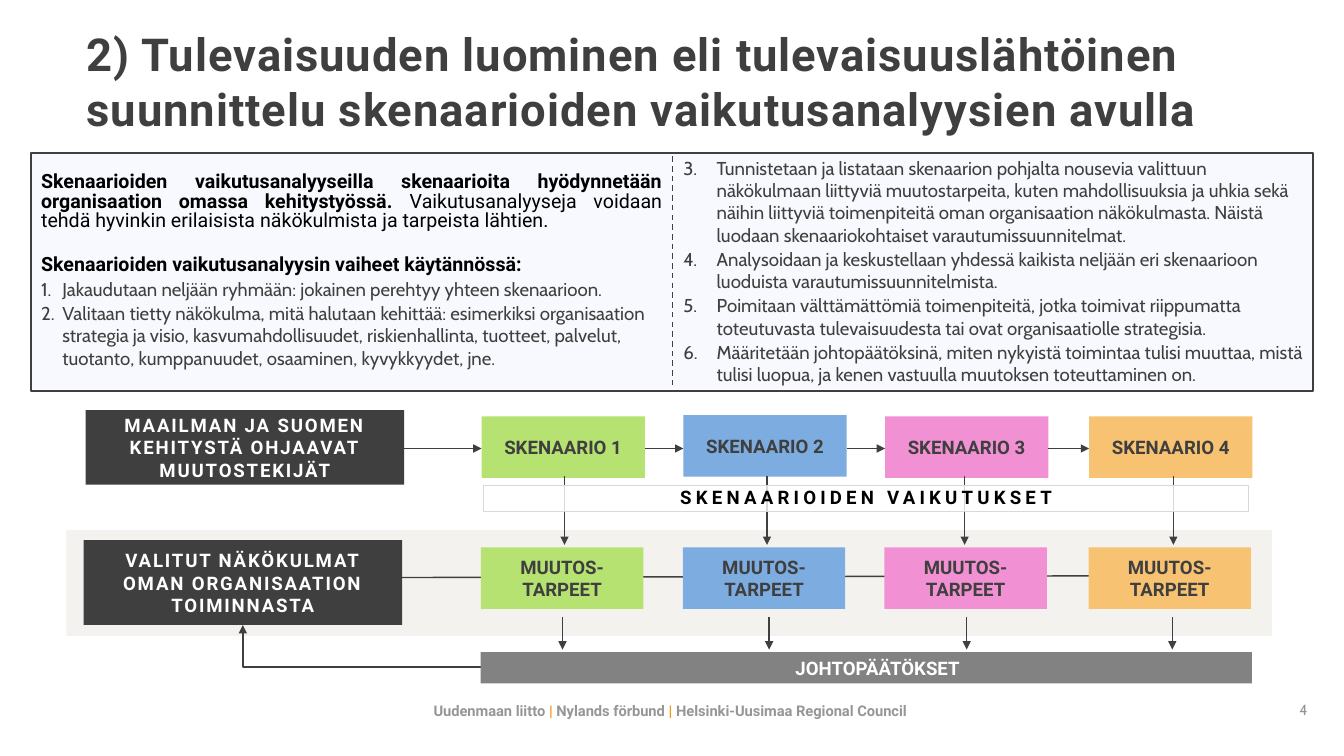
from lxml.etree import SubElement
from pptx import Presentation
from pptx.dml.color import RGBColor
from pptx.enum.dml import MSO_LINE
from pptx.enum.shapes import MSO_CONNECTOR, MSO_SHAPE
from pptx.enum.text import MSO_ANCHOR, PP_ALIGN
from pptx.oxml.ns import qn
from pptx.util import Pt

COLORS = {
    "dark": "3F3F3F", "black": "000000", "white": "FFFFFF", "panel": "F8F9FE",
    "band": "EDEAE5", "border": "D9D9D9", "conclusion": "828282",
    "footer": "969696", "number": "939393", "orange": "F49915",
    "green": "B6E272", "blue": "7DADE0", "pink": "F191D3", "amber": "F8C273",
}
COLORS = {name: RGBColor.from_string(value) for name, value in COLORS.items()}

deck = Presentation()
deck.slide_width, deck.slide_height = Pt(960), Pt(540)
page = deck.slides.add_slide(deck.slide_layouts[6])


def add_box(place, fill=None, texts=(), size=13.3, color="dark", face="Roboto", bold=True,
            align=PP_ALIGN.CENTER, inset=(7.2, 3.6), tracking=0, outline=None, weight=1):
    place = [Pt(length) for length in place]
    if fill or outline:
        box = page.shapes.add_shape(MSO_SHAPE.RECTANGLE, *place)
        box.shadow.inherit = False
    else:
        box = page.shapes.add_textbox(*place)
    if fill:
        box.fill.solid()
        box.fill.fore_color.rgb = COLORS[fill]
    else:
        box.fill.background()
    if outline:
        box.line.color.rgb = COLORS[outline]
        box.line.width = Pt(weight)
    else:
        box.line.fill.background()
    frame = box.text_frame
    frame.word_wrap = True
    frame.vertical_anchor = MSO_ANCHOR.MIDDLE
    frame.margin_left = frame.margin_right = Pt(inset[0])
    frame.margin_top = frame.margin_bottom = Pt(inset[1])
    for index, text in enumerate(texts):
        para = frame.add_paragraph() if index else frame.paragraphs[0]
        para.text = text
        para.alignment = align
        font = para.font
        font.name, font.size, font.bold = face, Pt(size), bold
        font.color.rgb = COLORS[color]
        if tracking:
            font._rPr.set("spc", str(round(tracking * 100)))
    return box


def add_line(start, end, arrow=True, kind=MSO_CONNECTOR.STRAIGHT):
    line = page.shapes.add_connector(kind, *[Pt(length) for length in (*start, *end)])
    line.line.color.rgb = COLORS["dark"]
    line.line.width = Pt(1)
    if arrow:
        SubElement(line.line._get_or_add_ln(), qn("a:tailEnd"), type="triangle")
    SubElement(line._element.spPr, qn("a:effectLst"))
    return line


add_box((54.7, 15.1, 850.3, 85),
        texts=["2) Tulevaisuuden luominen eli tulevaisuuslähtöinen suunnittelu "
               "skenaarioiden vaikutusanalyysien avulla"],
        size=32.4, align=PP_ALIGN.LEFT, tracking=0.7)

footer = add_box((263.5, 496.1, 430.6, 22.3), texts=[""], size=10.5, color="footer")
for text, color in [("Uudenmaan liitto ", "footer"), ("| ", "orange"),
                    ("Nylands förbund ", "footer"), ("| ", "orange"),
                    ("Helsinki-Uusimaa Regional Council", "footer")]:
    span = footer.text_frame.paragraphs[0].add_run()
    span.text = text
    span.font.color.rgb = COLORS[color]
add_box((882, 492.5, 59, 28.8), texts=["4"], size=10.5, color="number", face="Cabin",
        bold=False, align=PP_ALIGN.RIGHT)

intro = [
    "",
    "Skenaarioiden vaikutusanalyysin vaiheet käytännössä:",
]
first_steps = [
    "Jakaudutaan neljään ryhmään: jokainen perehtyy yhteen skenaarioon.",
    "Valitaan tietty näkökulma, mitä halutaan kehittää: esimerkiksi organisaation strategia "
    "ja visio, kasvumahdollisuudet, riskienhallinta, tuotteet, palvelut, tuotanto, "
    "kumppanuudet, osaaminen, kyvykkyydet, jne.",
]
last_steps = [
    "Tunnistetaan ja listataan skenaarion pohjalta nousevia valittuun näkökulmaan liittyviä "
    "muutostarpeita, kuten mahdollisuuksia ja uhkia sekä näihin liittyviä toimenpiteitä oman "
    "organisaation näkökulmasta. Näistä luodaan skenaariokohtaiset varautumissuunnitelmat.",
    "Analysoidaan ja keskustellaan yhdessä kaikista neljään eri skenaarioon luoduista "
    "varautumissuunnitelmista.",
    "Poimitaan välttämättömiä toimenpiteitä, jotka toimivat riippumatta toteutuvasta "
    "tulevaisuudesta tai ovat organisaatiolle strategisia.",
    "Määritetään johtopäätöksinä, miten nykyistä toimintaa tulisi muuttaa, mistä tulisi "
    "luopua, ja kenen vastuulla muutoksen toteuttaminen on.",
]
for left, lead, steps, number, indent in [(22.3, intro, first_steps, 1, 15.1),
                                          (481, [], last_steps, 3, 23.8)]:
    panel = add_box((left, 109.4, 457.9, 168.5), "panel", lead + steps, face="Cabin",
                    bold=False, align=PP_ALIGN.LEFT, inset=(7.2, 7.2))
    paras = panel.text_frame.paragraphs
    for para in paras:
        para.space_before = Pt(1.3)
    for para in paras[:len(lead)]:
        para.alignment = PP_ALIGN.JUSTIFY
        para.line_spacing = 0.82
        para.font.name, para.font.size, para.font.bold = "Roboto", Pt(14), True
        para.font.color.rgb = COLORS["black"]
    for para in paras[len(lead):]:
        props = para._p.get_or_add_pPr()
        props.set("marL", str(Pt(indent)))
        props.set("indent", str(-Pt(indent)))
        bullet = SubElement(props, qn("a:buAutoNum"), type="arabicPeriod", startAt=str(number))
        props.find(qn("a:defRPr")).addprevious(bullet)
    if lead:
        for text, bold in [("Skenaarioiden vaikutusanalyyseilla skenaarioita hyödynnetään "
                            "organisaation omassa kehitystyössä. ", True),
                           ("Vaikutusanalyyseja voidaan tehdä hyvinkin erilaisista "
                            "näkökulmista ja tarpeista lähtien.", False)]:
            span = paras[0].add_run()
            span.text = text
            span.font.bold = bold
        paras[1].space_before = Pt(18)
add_box((22.3, 109.4, 915.8, 169.9), outline="dark", weight=1.5)

add_box((61.2, 293, 227.5, 53.3), "dark",
        ["MAAILMAN JA SUOMEN KEHITYSTÄ OHJAAVAT MUUTOSTEKIJÄT"],
        color="white", inset=(7.9, 4.3), tracking=1.3)
band = add_box((47.5, 378.7, 861.1, 75.6), "band")
add_line((258.5, 412.6), (884.9, 411.1))

scenarios = [
    ("green", 344, 297.4, 403.2, 401.8),
    ("blue", 488.2, 296.6, 547.9, 549.4),
    ("pink", 632.2, 297.4, 689, 690.5),
    ("amber", 778, 297.4, 838.1, 837.4),
]
previous_edge = 278.6
for number, (color, left, top, upper_arrow, lower_arrow) in enumerate(scenarios, 1):
    add_line((previous_edge, 320.4), (left, 320.4))
    add_box((left, top, 116.6, 43.9), color, [f"SKENAARIO {number}"])
    add_box((left - 0.4, 391, 116, 43.9), color, ["MUUTOS-", "TARPEET"], inset=(5.8, 3.6))
    add_line((upper_arrow, 340.2), (upper_arrow, 389.2))
    add_line((lower_arrow, 441), (lower_arrow, 464))
    previous_edge = left + 116.6

effects = add_box((345.6, 347, 546.5, 18.7), "white", ["SKENAARIOIDEN VAIKUTUKSET"],
                  color="black", inset=(11.5, 0), tracking=3, outline="border", weight=0.75)
effects.text_frame.paragraphs[0].line_spacing = 0.9
for box, opacity in [(band, 60), (effects, 80)]:
    shade = box._element.spPr.find(qn("a:solidFill"))[0]
    SubElement(shade, qn("a:alpha"), val=str(opacity * 1000))

add_box((59.8, 385.9, 227.5, 60.5), "dark",
        ["VALITUT NÄKÖKULMAT OMAN ORGANISAATION TOIMINNASTA"],
        color="white", inset=(7.9, 4.3), tracking=1.3)
feedback = add_line((343.4, 476.6), (173.5, 446.4), kind=MSO_CONNECTOR.ELBOW)
feedback._element.spPr.find(qn("a:prstGeom")).set("prst", "bentConnector2")
conclusions = add_box((343.4, 465.8, 550.8, 22.3), "conclusion", ["JOHTOPÄÄTÖKSET"],
                      color="white", inset=(7.9, 2.9))
conclusions.text_frame.paragraphs[0]._p.get_or_add_pPr().set("marL", str(Pt(16.2)))

divider = add_line((480.2, 111.6), (480.2, 280.1), arrow=False)
divider.line.dash_style = MSO_LINE.DASH

deck.save("out.pptx")
